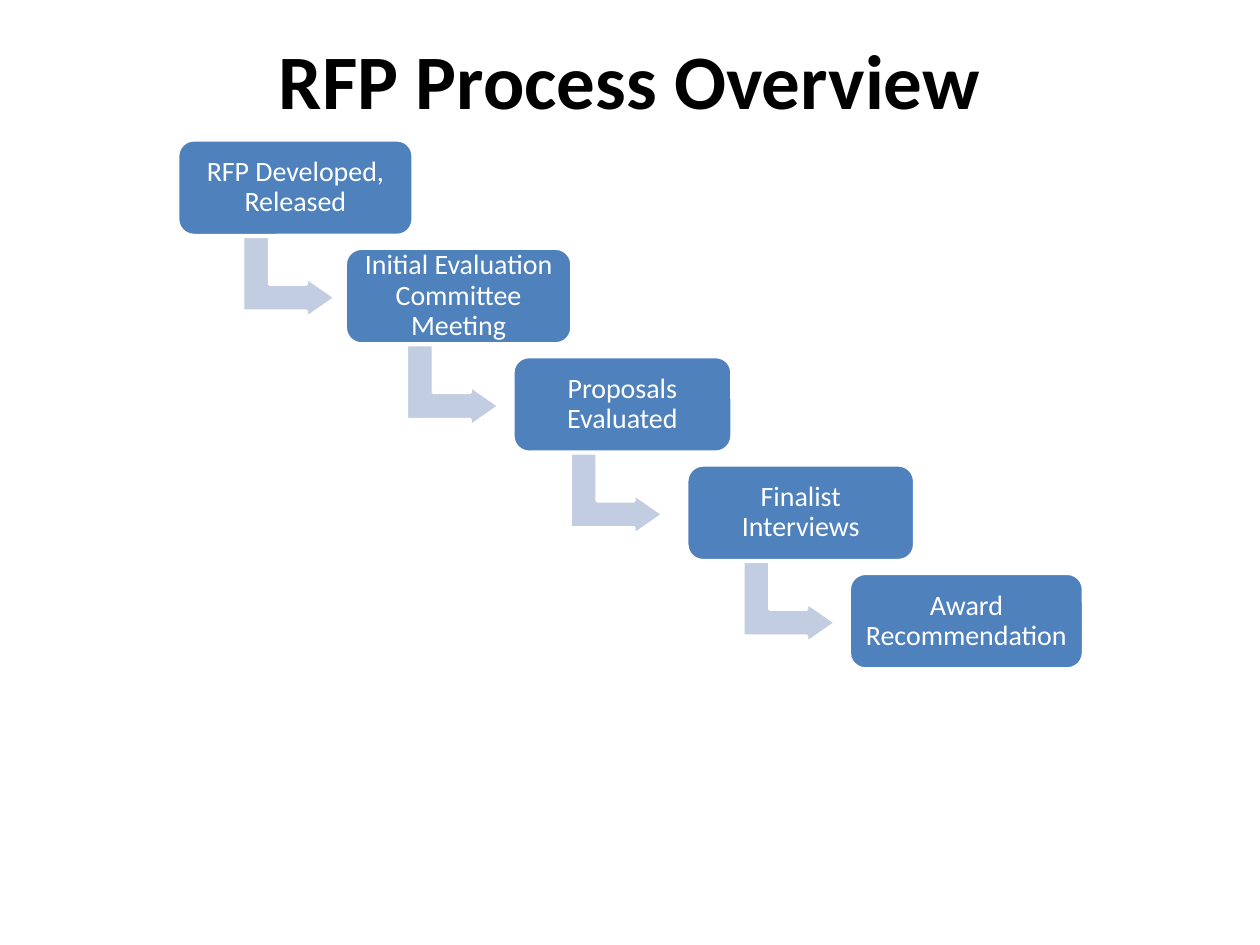
import pptx
import pptx.dml.color
import pptx.enum.shapes
import pptx.enum.text
import pptx.util

Inches = pptx.util.Inches
Pt = pptx.util.Pt
Color = pptx.dml.color.RGBColor
Kind = pptx.enum.shapes.MSO_SHAPE


class Theme:
    font = "Calibri"
    black = Color.from_string("000000")
    white = Color.from_string("FFFFFF")
    blue = Color.from_string("4F81BD")
    pale = Color.from_string("C2CDE1")
    title = Pt(44)
    label = Pt(16)
    edge = Pt(2)


def write(shape, text, size, color, bold=False, inset=0.1, space=1.0):
    frame = shape.text_frame
    frame.word_wrap = True
    frame.vertical_anchor = pptx.enum.text.MSO_ANCHOR.MIDDLE
    frame.margin_left = frame.margin_right = Inches(inset)
    frame.margin_top = frame.margin_bottom = Inches(min(inset, 0.07))
    para = frame.paragraphs[0]
    para.alignment = pptx.enum.text.PP_ALIGN.CENTER
    para.line_spacing = space
    run = para.add_run()
    run.text = text
    run.font.name = Theme.font
    run.font.size = size
    run.font.bold = bold
    run.font.color.rgb = color


def draw(kind, left, top, width, height, fill, adjust):
    shape = slide.shapes.add_shape(
        kind, Inches(left), Inches(top), Inches(width), Inches(height))
    shape.shadow.inherit = False
    shape.fill.solid()
    shape.fill.fore_color.rgb = fill
    shape.line.color.rgb = Theme.white
    shape.line.width = Theme.edge
    for i, value in enumerate(adjust):
        shape.adjustments[i] = value
    return shape


deck = pptx.Presentation()
deck.slide_width = Inches(10)
deck.slide_height = Inches(7.5)
slide = deck.slides.add_slide(deck.slide_layouts[6])

title = slide.shapes.add_textbox(Inches(0.5), Inches(0), Inches(9), Inches(1.25))
write(title, "RFP Process Overview", size=Theme.title, color=Theme.black, bold=True)

# Label, box left, box width, left of the arrow to the next step
steps = [
    ("RFP Developed, Released", 1.41, 1.87, 1.97),
    ("Initial Evaluation Committee Meeting", 2.74, 1.8, 3.27),
    ("Proposals Evaluated", 4.07, 1.74, 4.57),
    ("Finalist Interviews", 5.45, 1.81, 5.94),
    ("Award Recommendation", 6.74, 1.86, None),
]
first, pitch, drop = 1.11, 0.86, 0.72

for i, (label, left, width, bend) in enumerate(steps):
    top = first + i * pitch
    if bend is not None:
        arrow = draw(Kind.BENT_UP_ARROW, bend, top + drop, 0.65, 0.74,
                     Theme.pale, (0.33, 0.25, 0.36))
        arrow.rotation = 90
    box = draw(Kind.ROUNDED_RECTANGLE, left, top, width, 0.76, Theme.blue, (0.17,))
    write(box, label, size=Theme.label, color=Theme.white, inset=0.07, space=0.9)

deck.save("out.pptx")
